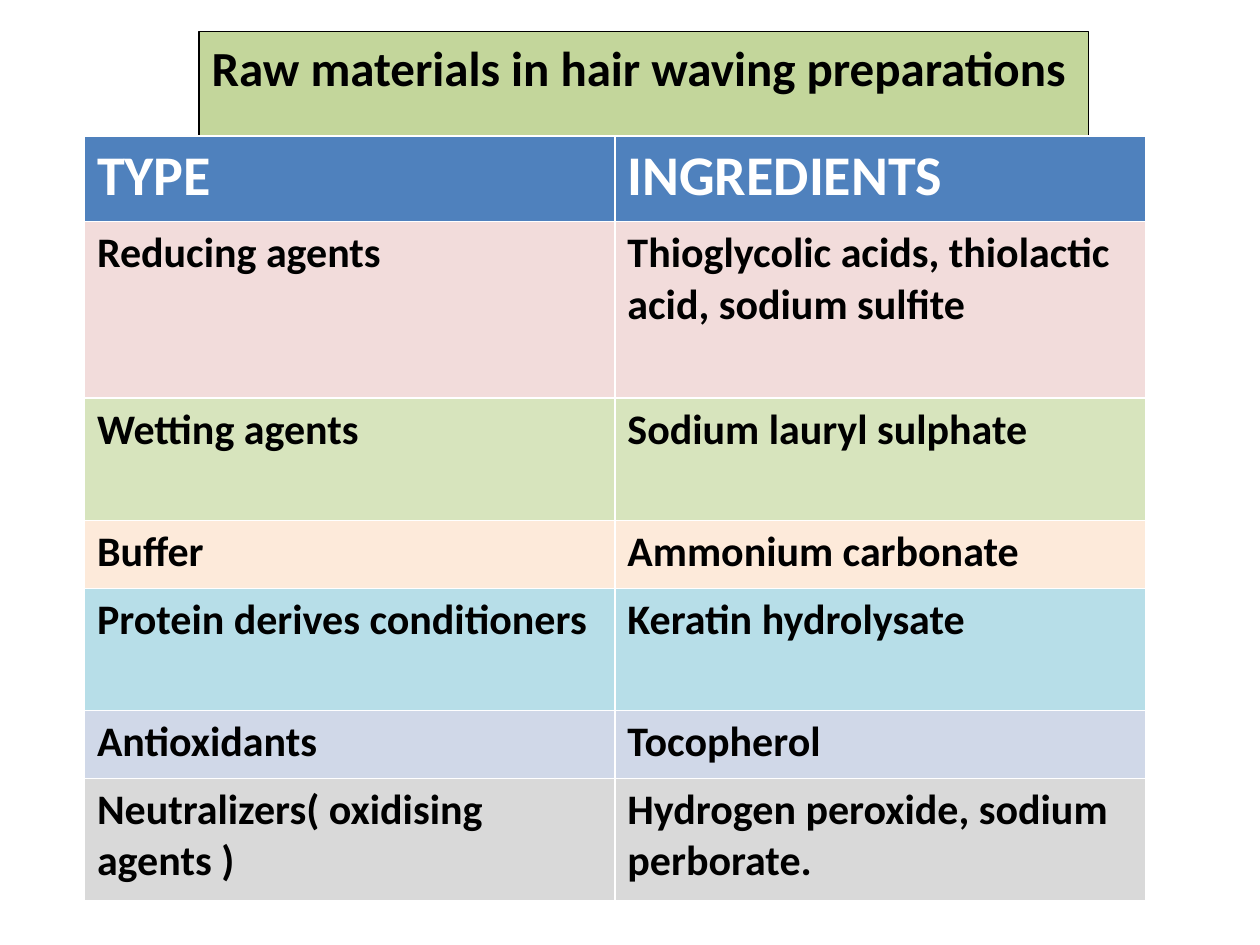
"""Build a slide with a table of raw materials in hair waving preparations."""
from pptx import Presentation
from pptx.dml.color import RGBColor
from pptx.enum import text
from pptx.util import Inches, Pt

BLACK = RGBColor(0x00, 0x00, 0x00)
WHITE = RGBColor(0xFF, 0xFF, 0xFF)
TITLE_GREEN = RGBColor(0xC3, 0xD6, 0x9B)
BLUE = RGBColor(0x4F, 0x81, 0xBD)
PINK = RGBColor(0xF2, 0xDC, 0xDB)
GREEN = RGBColor(0xD7, 0xE4, 0xBD)
PEACH = RGBColor(0xFD, 0xEA, 0xDA)
AQUA = RGBColor(0xB7, 0xDE, 0xE8)
PALE_BLUE = RGBColor(0xD0, 0xD8, 0xE8)
GREY = RGBColor(0xD9, 0xD9, 0xD9)

ROWS = [
    (0.68, BLUE, "TYPE", "INGREDIENTS"),
    (1.4, PINK, "Reducing agents", "Thioglycolic acids, thiolactic acid, sodium sulfite"),
    (0.97, GREEN, "Wetting agents", "Sodium lauryl sulphate"),
    (0.54, PEACH, "Buffer", "Ammonium carbonate"),
    (0.97, AQUA, "Protein derives conditioners", "Keratin hydrolysate"),
    (0.54, PALE_BLUE, "Antioxidants", "Tocopherol"),
    (0.97, GREY, "Neutralizers( oxidising agents )", "Hydrogen peroxide, sodium perborate."),
]


def style(paragraph, size, color):
    font = paragraph.font
    font.name = "Calibri"
    font.size = Pt(size)
    font.bold = True
    font.color.rgb = color


deck = Presentation()
deck.slide_width, deck.slide_height = Inches(10), Inches(7.5)
page = deck.slides.add_slide(deck.slide_layouts[5])

title = page.shapes.title
title.left, title.top = Inches(1.58), Inches(0.25)
title.width, title.height = Inches(7.06), Inches(0.57)
title.fill.solid()
title.fill.fore_color.rgb = TITLE_GREEN
title.line.color.rgb = BLACK
title.line.width = Pt(0.75)
frame = title.text_frame
frame.text = "Raw materials in hair waving preparations"
frame.word_wrap = False
frame.auto_size = text.MSO_AUTO_SIZE.SHAPE_TO_FIT_TEXT
frame.vertical_anchor = text.MSO_ANCHOR.TOP
frame.paragraphs[0].alignment = text.PP_ALIGN.LEFT
style(frame.paragraphs[0], 28, BLACK)

table = page.shapes.add_table(
    len(ROWS), 2, Inches(0.67), Inches(1.08), Inches(8.42), Inches(6.07)
).table
for row, (height, fill, *labels) in zip(table.rows, ROWS):
    row.height = Inches(height)
    size, color = (32, WHITE) if fill == BLUE else (24, BLACK)
    for cell, label in zip(row.cells, labels):
        cell.text = label
        cell.fill.solid()
        cell.fill.fore_color.rgb = fill
        style(cell.text_frame.paragraphs[0], size, color)

deck.save("out.pptx")
